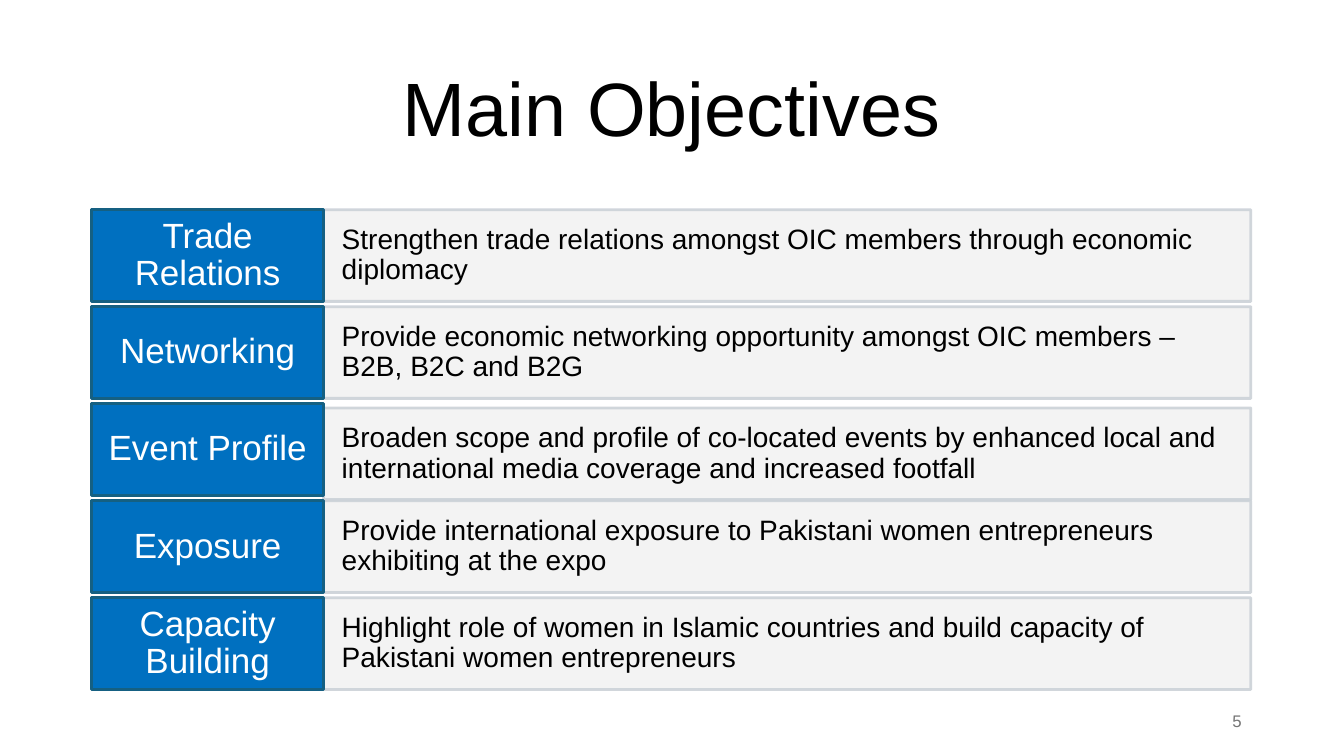
from dataclasses import dataclass

from lxml import etree
from pptx import Presentation
from pptx.dml.color import RGBColor
from pptx.enum.shapes import MSO_SHAPE
from pptx.enum.text import MSO_ANCHOR, PP_ALIGN
from pptx.oxml.ns import qn
from pptx.util import Pt

RECTANGLE = MSO_SHAPE.RECTANGLE
MIDDLE = MSO_ANCHOR.MIDDLE
LEFT, CENTER, RIGHT = PP_ALIGN.LEFT, PP_ALIGN.CENTER, PP_ALIGN.RIGHT

FONT = "Arial"
MARGIN_LEFT = 65.5
CONTENT_WIDTH = 828
LABEL_WIDTH = 165.6
ROW_TOP, ROW_PITCH, ROW_HEIGHT = 149.8, 69.3, 65.5


@dataclass(frozen=True)
class Objective:
    label: str
    description: str
    nudge: float = 0  # extra drop of the description box


@dataclass(frozen=True)
class CellStyle:
    fill: str
    line: str
    color: str
    size: float
    align: PP_ALIGN
    inset: float
    opacity: int = 100


LABEL = CellStyle("0070C0", "156082", "FFFFFF", 25, CENTER, 8.9)
DESCRIPTION = CellStyle("F2F2F2", "CCD2D8", "000000", 20, LEFT, 13, 90)

OBJECTIVES = [
    Objective("Trade Relations",
              "Strengthen trade relations amongst OIC members through economic diplomacy"),
    Objective("Networking",
              "Provide economic networking opportunity amongst OIC members – B2B, B2C and B2G"),
    Objective("Event Profile",
              "Broaden scope and profile of co-located events by enhanced local and "
              "international media coverage and increased footfall", 3),
    Objective("Exposure",
              "Provide international exposure to Pakistani women entrepreneurs "
              "exhibiting at the expo"),
    Objective("Capacity Building",
              "Highlight role of women in Islamic countries and build capacity of "
              "Pakistani women entrepreneurs"),
]


def rgb(value: str) -> RGBColor:
    return RGBColor.from_string(value)


def place(shape, left: float, top: float, width: float, height: float) -> None:
    shape.left, shape.top = Pt(left), Pt(top)
    shape.width, shape.height = Pt(width), Pt(height)


def write(shape, text: str, size: float, color: str, align: PP_ALIGN,
          inset: float = 7.2, spacing: float = 0.9) -> None:
    frame = shape.text_frame
    frame.word_wrap = True
    frame.vertical_anchor = MIDDLE
    frame.margin_left = frame.margin_right = Pt(inset)
    frame.margin_top = frame.margin_bottom = Pt(3.6)
    para = frame.paragraphs[0]
    para.text = text
    para.alignment = align
    para.line_spacing = spacing
    para.font.name = FONT
    para.font.size = Pt(size)
    para.font.color.rgb = rgb(color)


def add_cell(page, left: float, top: float, width: float, text: str,
             style: CellStyle) -> None:
    box = page.shapes.add_shape(RECTANGLE, Pt(left), Pt(top), Pt(width), Pt(ROW_HEIGHT))
    box.shadow.inherit = False
    box.fill.solid()
    box.fill.fore_color.rgb = rgb(style.fill)
    box.line.color.rgb = rgb(style.line)
    box.line.width = Pt(2)
    if style.opacity < 100:
        for color in box._element.spPr.iter(qn("a:srgbClr")):
            etree.SubElement(color, qn("a:alpha"), val=str(style.opacity * 1000))
    write(box, text, style.size, style.color, style.align, style.inset)


def main() -> None:
    deck = Presentation()
    deck.slide_width, deck.slide_height = Pt(960), Pt(540)
    page = deck.slides.add_slide(deck.slide_layouts[5])

    # Title
    title = page.shapes.title
    place(title, MARGIN_LEFT, 39.6, CONTENT_WIDTH, 80.6)
    title.fill.solid()
    title.fill.fore_color.rgb = rgb("FFFFFF")
    write(title, "Main Objectives", 54, "000000", CENTER)

    # Objectives: a label and its description in each row
    for index, objective in enumerate(OBJECTIVES):
        top = ROW_TOP + index * ROW_PITCH
        add_cell(page, MARGIN_LEFT + LABEL_WIDTH, top + objective.nudge,
                 CONTENT_WIDTH - LABEL_WIDTH, objective.description, DESCRIPTION)
        add_cell(page, MARGIN_LEFT, top, LABEL_WIDTH, objective.label, LABEL)

    # Page number
    number = page.shapes.add_textbox(Pt(678), Pt(500.5), Pt(216), Pt(28.8))
    write(number, "5", 12, "757575", RIGHT, spacing=1.0)

    deck.save("out.pptx")


if __name__ == "__main__":
    main()
